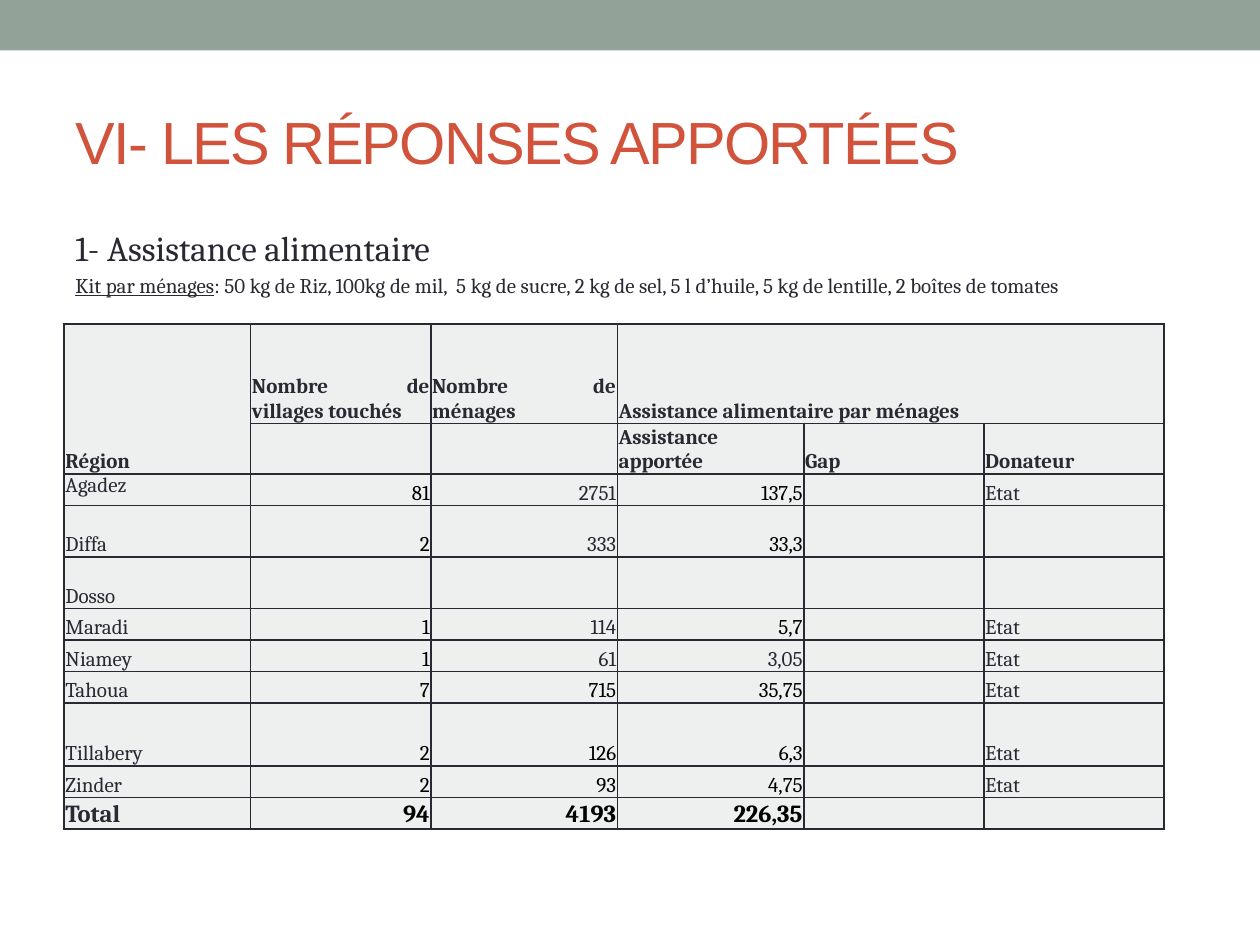
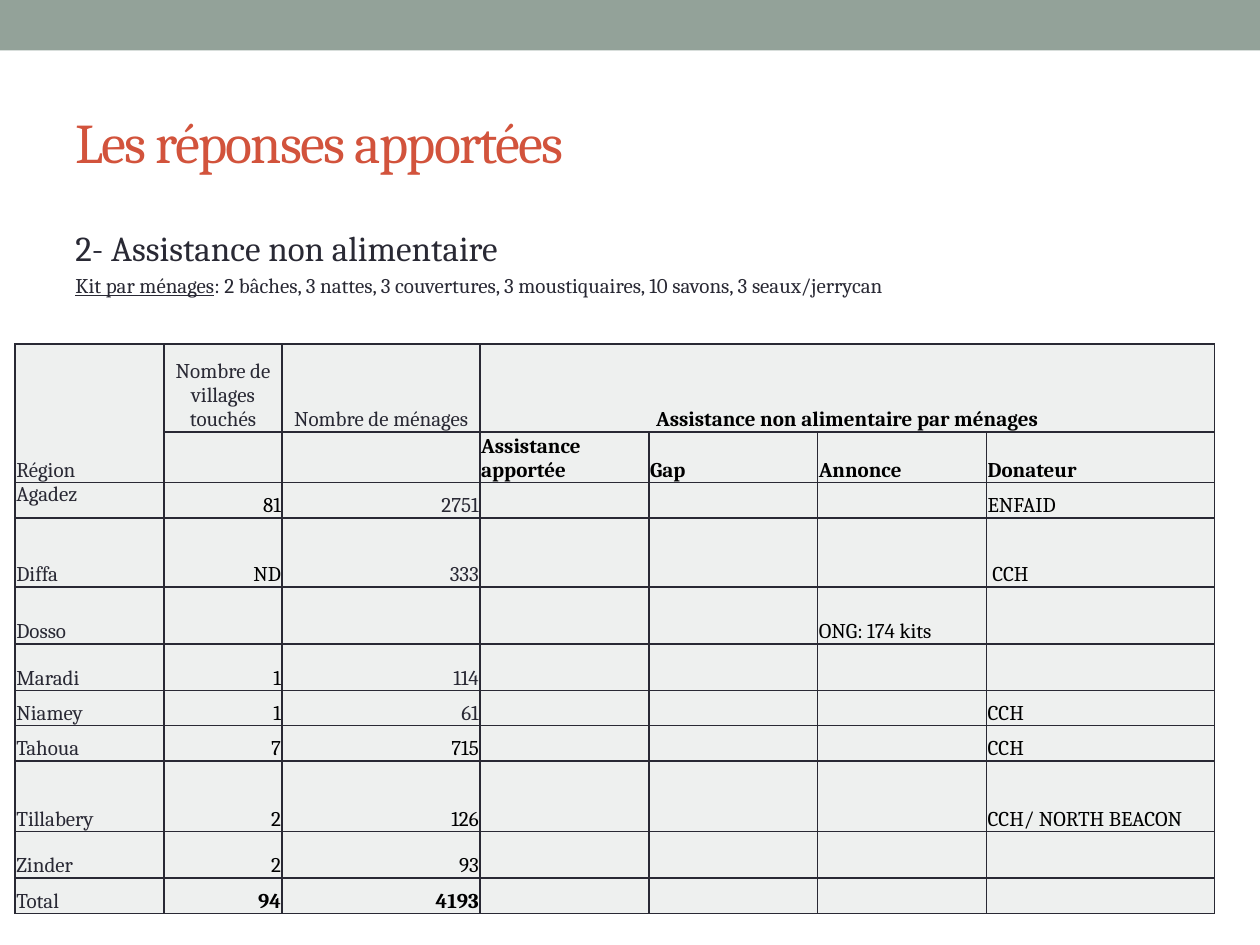
from lxml.etree import SubElement
from pptx import Presentation
from pptx.dml.color import RGBColor
from pptx.enum.shapes import MSO_SHAPE
from pptx.enum.text import MSO_ANCHOR, MSO_AUTO_SIZE, PP_ALIGN
from pptx.oxml.ns import qn
from pptx.util import Inches, Pt

SAGE = RGBColor(0x93, 0xA2, 0x99)
RED = RGBColor(0xD2, 0x53, 0x3C)
INK = RGBColor(0x29, 0x29, 0x34)
BLACK = RGBColor(0, 0, 0)
CELL_FILL = RGBColor(0xEE, 0xF0, 0xEF)

SERIF = "Cambria"
LEFT, CENTER, RIGHT, JUSTIFY = (
    PP_ALIGN.LEFT, PP_ALIGN.CENTER, PP_ALIGN.RIGHT, PP_ALIGN.JUSTIFY)

# Content: header cells are (row, column, text, alignment, colour, bold)
FOOD = {
    "title": ("VI- LES RÉPONSES APPORTÉES", "Arial", 34),
    "heading": "1- Assistance alimentaire",
    "kit": ": 50 kg de Riz, 100kg de mil,  5 kg de sucre, 2 kg de sel, "
           "5 l d’huile, 5 kg de lentille, 2 boîtes de tomates",
    "at": (0.51, 2.57),
    "cols": [1.48, 1.43, 1.48, 1.48, 1.43, 1.43],
    "rows": [0.79, 0.32, 0.25, 0.41, 0.41, 0.25, 0.25, 0.25, 0.5, 0.25, 0.25],
    "header": [
        (0, 0, "Région", JUSTIFY, INK, True),
        (0, 1, "Nombre de villages touchés", JUSTIFY, INK, True),
        (0, 2, "Nombre de ménages", JUSTIFY, INK, True),
        (0, 3, "Assistance alimentaire par ménages", JUSTIFY, INK, True),
        (1, 3, "Assistance apportée", JUSTIFY, INK, True),
        (1, 4, "Gap", JUSTIFY, INK, True),
        (1, 5, "Donateur", JUSTIFY, INK, True),
    ],
    "body": [
        ("Agadez", "81", "2751", "137,5", "", "Etat"),
        ("Diffa", "2", "333", "33,3", "", ""),
        ("Dosso", "", "", "", "", ""),
        ("Maradi", "1", "114", "5,7", "", "Etat"),
        ("Niamey", "1", "61", "3,05", "", "Etat"),
        ("Tahoua", "7", "715", "35,75", "", "Etat"),
        ("Tillabery", "2", "126", "6,3", "", "Etat"),
        ("Zinder", "2", "93", "4,75", "", "Etat"),
        ("Total", "94", "4193", "226,35", "", ""),
    ],
    "total_size": 14,
    "total_label_bold": True,
}
NON_FOOD = {
    "title": ("Les réponses apportées", SERIF, 32),
    "heading": "2- Assistance non alimentaire",
    "kit": ": 2 bâches, 3 nattes, 3 couvertures, 3 moustiquaires, "
           "10 savons, 3 seaux/jerrycan",
    "at": (0.12, 2.73),
    "cols": [1.18, 0.94, 1.57, 1.34, 1.34, 1.34, 1.81],
    "rows": [0.7, 0.37, 0.28, 0.55, 0.45, 0.37, 0.28, 0.28, 0.56, 0.37, 0.28],
    "header": [
        (0, 0, "Région", LEFT, INK, False),
        (0, 1, "Nombre de villages touchés", CENTER, INK, False),
        (0, 2, "Nombre de ménages", CENTER, INK, False),
        (0, 3, "Assistance non alimentaire par ménages", CENTER, BLACK, True),
        (1, 3, "Assistance apportée", LEFT, BLACK, True),
        (1, 4, "Gap", LEFT, BLACK, True),
        (1, 5, "Annonce", LEFT, BLACK, True),
        (1, 6, "Donateur", LEFT, BLACK, True),
    ],
    "body": [
        ("Agadez", "81", "2751", "", "", "", "ENFAID"),
        ("Diffa", "ND", "333", "", "", "", " CCH"),
        ("Dosso", "", "", "", "", "ONG: 174 kits", ""),
        ("Maradi", "1", "114", "", "", "", ""),
        ("Niamey", "1", "61", "", "", "", "CCH"),
        ("Tahoua", "7", "715", "", "", "", "CCH"),
        ("Tillabery", "2", "126", "", "", "", "CCH/ NORTH BEACON"),
        ("Zinder", "2", "93", "", "", "", ""),
        ("Total", "94", "4193", "", "", "", ""),
    ],
    "total_size": 12,
    "total_label_bold": False,
}
INK_VALUES = {"2751", "333", "114", "61", "3,05", "Etat"}


def add_run(p, text, size, color, font=SERIF, bold=False, underline=False):
    r = p.add_run()
    r.text = text
    r.font.name, r.font.size = font, Pt(size)
    r.font.bold, r.font.underline = bold, underline
    r.font.color.rgb = color
    return r


def add_band(slide, layout):
    """Draw the top band and move it to the layout, where all slides share it."""
    sp = slide.shapes.add_shape(
        MSO_SHAPE.RECTANGLE, 0, 0, Inches(10), Inches(0.4))
    sp.shadow.inherit = False
    sp.fill.solid()
    sp.fill.fore_color.rgb = SAGE
    sp.line.fill.background()
    layout.shapes._spTree.insert(2, sp._element)


def add_title(slide, text, font, size):
    sp = slide.shapes.title
    sp.left, sp.top, sp.width, sp.height = map(Inches, (0.5, 0.58, 9, 1.08))
    tf = sp.text_frame
    tf.auto_size = MSO_AUTO_SIZE.NONE
    tf.vertical_anchor = MSO_ANCHOR.MIDDLE
    p = tf.paragraphs[0]
    p.alignment = LEFT
    r = add_run(p, text, size, RED, font)
    r.font._element.set("spc", "-100")


def add_intro(slide, heading, kit):
    sp = slide.shapes.add_textbox(*map(Inches, (0.5, 1.75, 9, 0.8)))
    tf = sp.text_frame
    tf.word_wrap = True
    p = tf.paragraphs[0]
    p.space_before = Pt(4)
    add_run(p, heading, 20, INK)
    p = tf.add_paragraph()
    p.space_before = Pt(2.4)
    add_run(p, "Kit par ménages", 12, INK, underline=True)
    add_run(p, kit, 12, INK)


def format_cell(cell):
    cell.margin_left = cell.margin_right = Inches(0.01)
    cell.margin_top = cell.margin_bottom = 0
    cell.vertical_anchor = MSO_ANCHOR.BOTTOM
    tcPr = cell._tc.get_or_add_tcPr()
    for side in ("a:lnL", "a:lnR", "a:lnT", "a:lnB"):
        ln = SubElement(tcPr, qn(side), w=str(Pt(1)))
        fill = SubElement(ln, qn("a:solidFill"))
        SubElement(fill, qn("a:srgbClr"), val=str(INK))
    cell.fill.solid()
    cell.fill.fore_color.rgb = CELL_FILL
    # Keeps empty cells from stretching their row
    end = cell.text_frame.paragraphs[0]._p.get_or_add_endParaRPr()
    end.set("sz", "1200")


def write_cell(cell, text, align, color, bold, size=12):
    p = cell.text_frame.paragraphs[0]
    p.alignment = align
    add_run(p, text, size, color, bold=bold)


def add_region_table(slide, data):
    cols, rows = data["cols"], data["rows"]
    left, top = data["at"]
    table = slide.shapes.add_table(
        len(rows), len(cols),
        *map(Inches, (left, top, sum(cols), sum(rows)))).table
    table.first_row = table.horz_banding = False
    for column, width in zip(table.columns, cols):
        column.width = Inches(width)
    for row, height in zip(table.rows, rows):
        row.height = Inches(height)
    for cell in table.iter_cells():
        format_cell(cell)

    # Header
    table.cell(0, 0).merge(table.cell(1, 0))
    table.cell(0, 3).merge(table.cell(0, len(cols) - 1))
    for row, col, *content in data["header"]:
        write_cell(table.cell(row, col), *content)

    # Regions and total
    for i, values in enumerate(data["body"], start=2):
        is_total = i == len(rows) - 1
        size = data["total_size"] if is_total else 12
        for j, text in enumerate(values):
            if not text:
                continue
            align = RIGHT if 1 <= j <= 3 else LEFT
            color = INK if j == 0 or text in INK_VALUES else BLACK
            bold = is_total and (j > 0 or data["total_label_bold"])
            write_cell(table.cell(i, j), text, align, color, bold, size)
    table.cell(2, 0).vertical_anchor = MSO_ANCHOR.TOP


def main():
    prs = Presentation()
    prs.slide_width, prs.slide_height = Inches(10), Inches(7.5)
    layout = prs.slide_layouts[5]
    for data in (FOOD, NON_FOOD):
        slide = prs.slides.add_slide(layout)
        if data is FOOD:
            add_band(slide, layout)
        add_title(slide, *data["title"])
        add_intro(slide, data["heading"], data["kit"])
        add_region_table(slide, data)
    prs.save("out.pptx")


if __name__ == "__main__":
    main()
